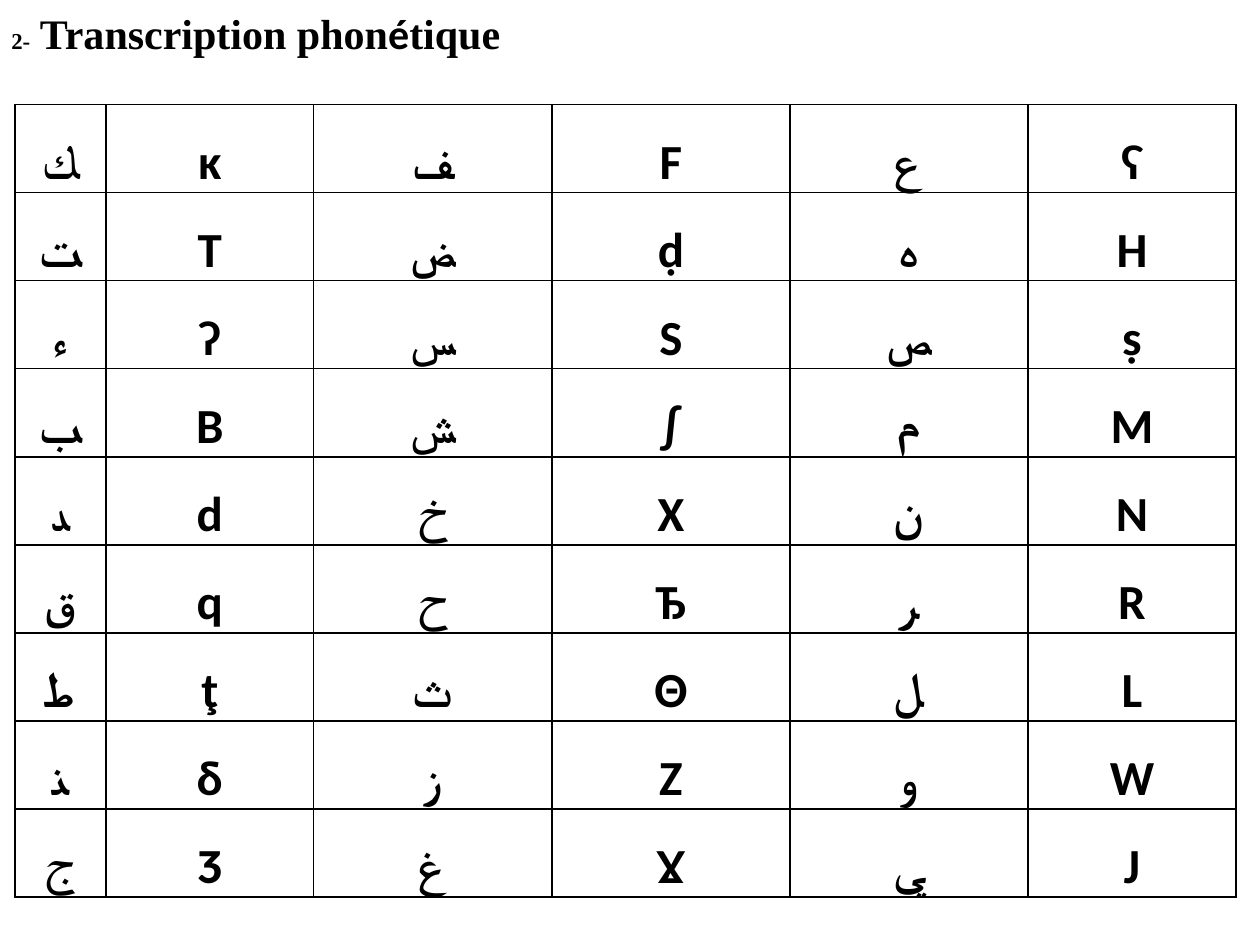
from dataclasses import dataclass

from lxml.etree import SubElement
from pptx import Presentation
from pptx.dml.color import RGBColor
from pptx.enum.text import MSO_ANCHOR, MSO_AUTO_SIZE, PP_ALIGN
from pptx.oxml.ns import qn
from pptx.util import Inches, Pt


@dataclass(frozen=True)
class Theme:
    ink: RGBColor = RGBColor(0, 0, 0)
    number_size: Pt = Pt(13)
    title_size: Pt = Pt(24)
    letter_size: Pt = Pt(28)
    border_width: Pt = Pt(1)
    title_font: str = "Times New Roman"
    letter_font: str = "Calibri"


theme = Theme()


def add_span(para, text, size, font):
    span = para.add_run()
    span.text = text
    span.font.size = size
    span.font.name = font
    span.font.bold = True
    span.font.color.rgb = theme.ink
    # Arabic letters take their typeface from the complex-script font
    SubElement(span._r.get_or_add_rPr(), qn("a:cs"), typeface=font)


def add_borders(cell):
    properties = cell._tc.get_or_add_tcPr()
    for side in ("a:lnL", "a:lnR", "a:lnT", "a:lnB"):
        line = SubElement(properties, qn(side), w=str(theme.border_width))
        fill = SubElement(line, qn("a:solidFill"))
        SubElement(fill, qn("a:srgbClr"), val=str(theme.ink))


deck = Presentation()
deck.slide_width, deck.slide_height = Inches(10), Inches(7.5)
page = deck.slides.add_slide(deck.slide_layouts[5])

# Title
title = page.shapes.title
title.left, title.top = Inches(-0.01), Inches(0)
title.width, title.height = Inches(10), Inches(1.11)
frame = title.text_frame
frame.word_wrap = True
frame.auto_size = MSO_AUTO_SIZE.NONE
frame.vertical_anchor = MSO_ANCHOR.TOP
frame.margin_top = Inches(0.06)
para = frame.paragraphs[0]
para.alignment = PP_ALIGN.LEFT
add_span(para, "2-", theme.number_size, theme.title_font)
add_span(para, " Transcription phon", theme.title_size, theme.title_font)
add_span(para, "é", theme.title_size, theme.letter_font)
add_span(para, "tique", theme.title_size, theme.title_font)

# Letters: three pairs of Arabic letter and phonetic sign per row
letter_rows = [
    ("ﻚ", "ĸ", "ﻒ", "F", "ﻉ", "ʕ"),
    ("ﺖ", "T", "ﺾ", "ḍ", "ﻩ", "H"),
    ("ﺀ", "ʔ", "ﺲ", "S", "ﺺ", "ṣ"),
    ("ﺐ", "B", "ﺶ", "∫", "ﻡ", "M"),
    ("ﺪ", "d", "ﺥ", "X", "ﻥ", "N"),
    ("ﻕ", "q", "ﺡ", "Ђ", "ﺮ", "R"),
    ("ﻃ", "ţ", "ﺙ", "Θ", "ﻞ", "L"),
    ("ﻨ", "δ", "ﺯ", "Z", "ﻭ", "W"),
    ("ﺝ", "Ʒ", "ﻍ", "Ɣ", "ﻲ", "J"),
]
column_widths = [0.72, 1.65, 1.89, 1.89, 1.89, 1.65]

# Table
table = page.shapes.add_table(
    len(letter_rows), len(column_widths),
    Inches(0.12), Inches(0.83), Inches(9.69), Inches(6.21),
).table
table.first_row = False
table.horz_banding = False
for column, width in zip(table.columns, column_widths):
    column.width = Inches(width)

for row, letters in zip(table.rows, letter_rows):
    row.height = Inches(0.69)
    for cell, letter in zip(row.cells, letters):
        cell.margin_left = cell.margin_right = Inches(0.07)
        cell.margin_top = cell.margin_bottom = Inches(0)
        add_borders(cell)
        cell.fill.background()
        para = cell.text_frame.paragraphs[0]
        para.alignment = PP_ALIGN.CENTER
        para.line_spacing = 1.47
        para.space_after = Pt(10)
        add_span(para, letter, theme.letter_size, theme.letter_font)

deck.save("out.pptx")
